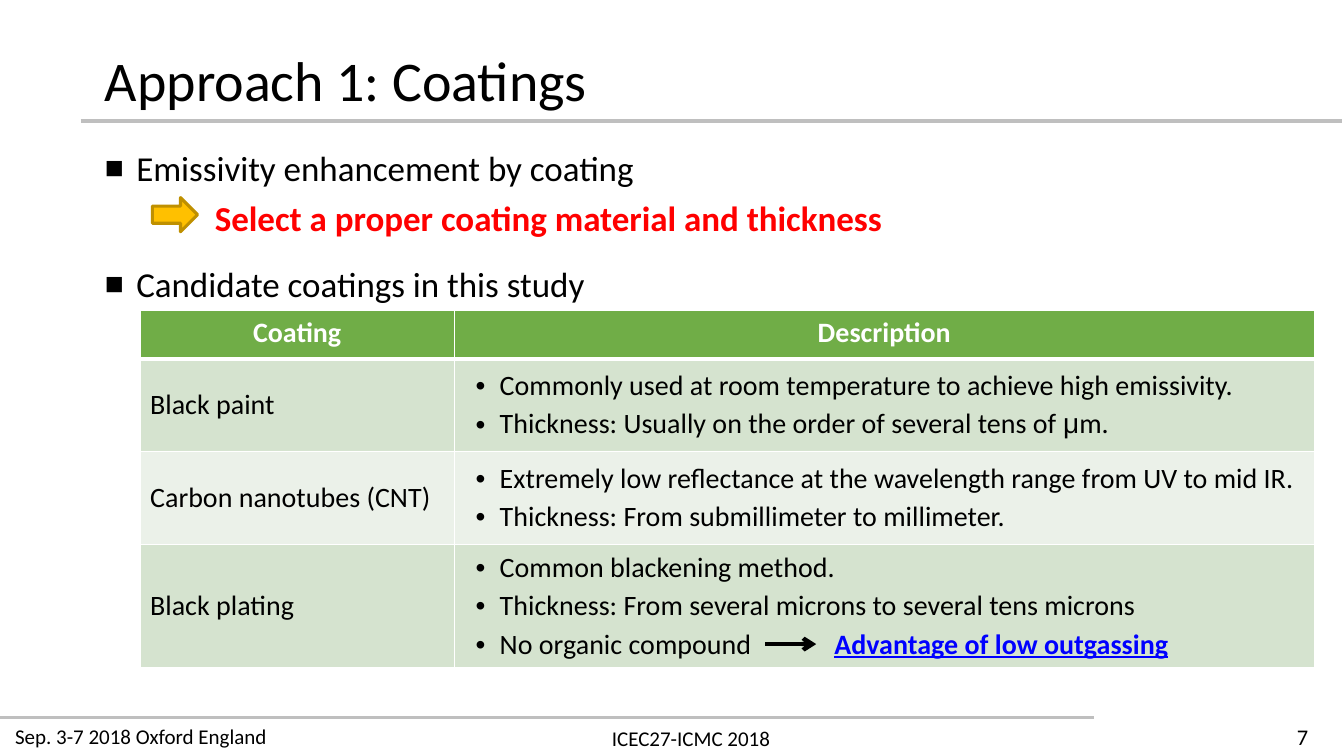
import pptx
import pptx.dml.color
import pptx.enum.shapes
import pptx.enum.text
import pptx.oxml.ns
import pptx.util
from dataclasses import dataclass
from lxml import etree

Cm, Pt = pptx.util.Cm, pptx.util.Pt
PP_ALIGN = pptx.enum.text.PP_ALIGN
ANCHOR = pptx.enum.text.MSO_ANCHOR
SHAPE = pptx.enum.shapes.MSO_SHAPE
qn = pptx.oxml.ns.qn


@dataclass(frozen=True)
class Theme:
    font: str = "Calibri"
    symbol_font: str = "Arial"
    title_size: int = 40
    list_size: int = 25
    table_size: int = 20
    number_size: int = 16
    footer_size: int = 15
    text: str = "000000"
    white: str = "FFFFFF"
    rule: str = "BFBFBF"
    alert: str = "FF0000"
    link: str = "0000FF"
    header: str = "70AD47"
    bands: tuple = ("D5E3CF", "EBF1E9")
    arrow: str = "FFC000"
    arrow_line: str = "BF9000"


def rgb(color):
    return pptx.dml.color.RGBColor.from_string(color)


def add_xml(parent, tag, **attrs):
    return etree.SubElement(parent, qn(tag), {k: str(v) for k, v in attrs.items()})


class Deck:
    def __init__(self, theme):
        self.theme = theme
        self.prs = pptx.Presentation()
        self.prs.slide_width, self.prs.slide_height = Cm(33.87), Cm(19.05)
        self.s = self.prs.slides.add_slide(self.prs.slide_layouts[3])

    def fill_paragraph(self, p, text, size, color=None, bold=False, align=PP_ALIGN.LEFT):
        """Accept a string or a list of (string, format) runs."""
        p.alignment = align
        f = p.font
        f.name, f.size, f.bold = self.theme.font, Pt(size), bold
        f.color.rgb = rgb(color or self.theme.text)
        for part, fmt in [(text, {})] if isinstance(text, str) else text:
            r = p.add_run()
            r.text = part
            if "font" in fmt:
                r.font.name = fmt["font"]
            if "color" in fmt:
                r.font.color.rgb = rgb(fmt["color"])
                r.font.bold = r.font.underline = True
            if "gap" in fmt:
                r._r.get_or_add_rPr().set("spc", str(round(fmt["gap"] * 100)))

    def indent(self, p, left, hanging=0, bullet=None, percent=100):
        pPr = p._p.get_or_add_pPr()
        pPr.set("marL", str(Cm(left)))
        pPr.set("indent", str(-Cm(hanging)))
        if bullet:
            add_xml(pPr, "a:buSzPct", val=percent * 1000)
            add_xml(pPr, "a:buFont", typeface=self.theme.symbol_font)
            add_xml(pPr, "a:buChar", char=bullet)
        else:
            add_xml(pPr, "a:buNone")

    def place(self, sp, left, top, width, height):
        sp.left, sp.top, sp.width, sp.height = map(Cm, (left, top, width, height))
        sp.text_frame.auto_size = pptx.enum.text.MSO_AUTO_SIZE.NONE
        return sp.text_frame

    def title(self, text, *box):
        tf = self.place(self.s.shapes.title, *box)
        tf.vertical_anchor = ANCHOR.BOTTOM
        self.fill_paragraph(tf.paragraphs[0], text, self.theme.title_size)
        tf.paragraphs[0].line_spacing = 0.9

    def bullet_list(self, idx, box, heading, conclusion=None):
        tf = self.place(self.s.placeholders[idx], *box)
        p = tf.paragraphs[0]
        self.indent(p, 0.79, 0.79, "■", 90)
        self.fill_paragraph(p, heading, self.theme.list_size)
        p.space_before = Pt(0)
        if conclusion:
            p = tf.add_paragraph()
            self.indent(p, 2.77)
            self.fill_paragraph(p, conclusion, self.theme.list_size, self.theme.alert, True)
            p.space_before = Pt(6)

    def label(self, text, box, size, align, anchor=ANCHOR.TOP, wrap=False):
        tf = self.s.shapes.add_textbox(*map(Cm, box)).text_frame
        tf.word_wrap, tf.vertical_anchor = wrap, anchor
        self.fill_paragraph(tf.paragraphs[0], text, size, align=align)

    def line(self, x1, x2, y, color, width, arrow=False):
        c = self.s.shapes.add_connector(
            pptx.enum.shapes.MSO_CONNECTOR.STRAIGHT, Cm(x1), Cm(y), Cm(x2), Cm(y))
        c.line.color.rgb, c.line.width = rgb(color), Pt(width)
        if arrow:
            add_xml(c.line._get_or_add_ln(), "a:tailEnd", type="arrow")
        add_xml(c._element.spPr, "a:effectLst")

    def block_arrow(self, *box):
        sp = self.s.shapes.add_shape(SHAPE.RIGHT_ARROW, *map(Cm, box))
        sp.shadow.inherit = False
        sp.fill.solid()
        sp.fill.fore_color.rgb = rgb(self.theme.arrow)
        sp.line.color.rgb, sp.line.width = rgb(self.theme.arrow_line), Pt(2.25)

    def style_cell(self, cell, fill, bottom=1):
        tcPr = cell._tc.get_or_add_tcPr()
        for side, width in (("L", 1), ("R", 1), ("T", 1), ("B", bottom)):
            ln = add_xml(tcPr, f"a:ln{side}", w=Pt(width))
            add_xml(add_xml(ln, "a:solidFill"), "a:srgbClr", val=self.theme.white)
        cell.fill.solid()
        cell.fill.fore_color.rgb = rgb(fill)

    def table(self, left, top, widths, heights, headers, rows):
        t = self.theme
        table = self.s.shapes.add_table(
            len(heights), len(widths), Cm(left), Cm(top),
            Cm(sum(widths)), Cm(sum(heights))).table
        for column, width in zip(table.columns, widths):
            column.width = Cm(width)
        for row, height in zip(table.rows, heights):
            row.height = Cm(height)
        for j, header in enumerate(headers):
            cell = table.cell(0, j)
            self.style_cell(cell, t.header, bottom=3)
            self.fill_paragraph(cell.text_frame.paragraphs[0], header, t.table_size,
                                t.white, True, PP_ALIGN.CENTER)
        for i, (name, points) in enumerate(rows, 1):
            name_cell, points_cell = table.cell(i, 0), table.cell(i, 1)
            for cell in (name_cell, points_cell):
                self.style_cell(cell, t.bands[(i - 1) % 2])
                cell.vertical_anchor = ANCHOR.MIDDLE
            self.fill_paragraph(name_cell.text_frame.paragraphs[0], name, t.table_size)
            tf = points_cell.text_frame
            for k, point in enumerate(points):
                p = tf.add_paragraph() if k else tf.paragraphs[0]
                self.indent(p, 0.89, 0.61, "•")
                self.fill_paragraph(p, point, t.table_size)
                p.space_before = Pt(3 if k else 0)


def main():
    t = Theme()
    deck = Deck(t)
    deck.line(2.03, 33.83, 3.05, t.rule, 2.25)
    deck.line(0, 27.58, 18.08, t.rule, 2.25)
    deck.label("ICEC27-ICMC 2018", (15.14, 18.16, 4.55, 0.89), t.footer_size,
               PP_ALIGN.CENTER)
    deck.label("7", (30.81, 18.08, 2.41, 0.97), t.number_size, PP_ALIGN.RIGHT,
               ANCHOR.MIDDLE, wrap=True)
    deck.label("Sep. 3-7 2018 Oxford England", (0.13, 18.11, 6.91, 0.89),
               t.footer_size, PP_ALIGN.LEFT)

    deck.title("Approach 1: Coatings", 2.39, 0.97, 22.61, 2.03)
    deck.bullet_list(1, (2.39, 3.56, 24.87, 2.62), "Emissivity enhancement by coating",
                     "Select a proper coating material and thickness")
    deck.bullet_list(2, (2.39, 6.48, 24.87, 1.32), "Candidate coatings in this study")
    deck.table(
        3.53, 7.82, (7.92, 21.67), (1.22, 2.34, 2.34, 3.1),
        ("Coating", "Description"),
        [("Black paint", [
            "Commonly used at room temperature to achieve high emissivity.",
            [("Thickness: Usually on the order of several tens of ", {}),
             ("μ", {"font": t.symbol_font}), ("m.", {})]]),
         ("Carbon nanotubes (CNT)", [
             "Extremely low reflectance at the wavelength range from UV to mid IR.",
             "Thickness: From submillimeter to millimeter."]),
         ("Black plating", [
             "Common blackening method.",
             "Thickness: From several microns to several tens microns",
             [("No organic compound", {}), (" ", {"gap": 54.8}),
              ("Advantage of low outgassing", {"color": t.link})]])])
    deck.line(19.28, 20.57, 16.23, t.text, 3, arrow=True)
    deck.block_arrow(3.84, 4.98, 1.14, 0.86)
    deck.prs.save("out.pptx")


if __name__ == "__main__":
    main()
